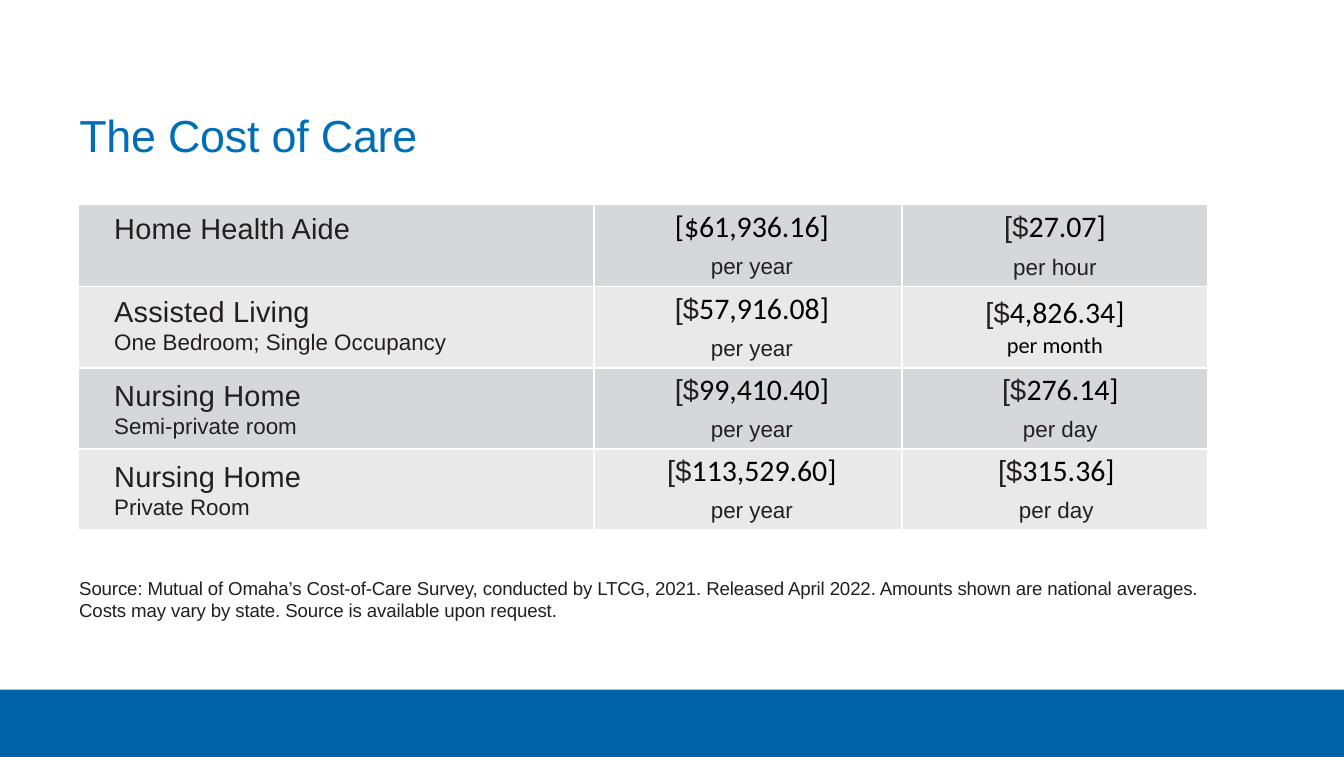
from copy import deepcopy
from lxml.etree import SubElement
from pptx import Presentation
from pptx.dml.color import RGBColor
from pptx.enum.shapes import MSO_SHAPE
from pptx.enum.text import MSO_ANCHOR, MSO_AUTO_SIZE, PP_ALIGN
from pptx.oxml.ns import qn
from pptx.util import Inches, Pt

BAR_BLUE = RGBColor(0x00, 0x62, 0xA7)
TITLE_BLUE = RGBColor(0x00, 0x6E, 0xB6)
INK = RGBColor(0x23, 0x1F, 0x20)
BLACK = RGBColor(0x00, 0x00, 0x00)
BANDS = [RGBColor(0xD5, 0xD7, 0xD8), RGBColor(0xE9, 0xE9, 0xEA)]

TITLE_STYLE = {"size": Pt(24), "name": "Arial", "color": TITLE_BLUE}
HEAD = {"size": Pt(15.5), "name": "Arial", "color": INK}
DETAIL = {"size": Pt(12), "name": "Arial", "color": INK}
AMOUNT = {"size": Pt(16), "name": "Calibri", "color": BLACK}
MONTH = {"size": Pt(12), "name": "Calibri", "color": BLACK}
NOTE = {"size": Pt(10), "name": "Arial", "color": INK}
SPACER = {"size": Pt(8), "name": "Arial", "color": INK}

TITLE = "The Cost of Care"
SOURCE = (
    "Source: Mutual of Omaha’s Cost-of-Care Survey, conducted by LTCG, 2021. "
    "Released April 2022. Amounts shown are national averages. Costs may vary "
    "by state. Source is available upon request."
)
CARE = [
    {"name": "Home Health Aide", "detail": "", "top": 0.07,
     "costs": [("[$61,936.16]", "per year", DETAIL, 0.06, 18.1),
               ("[$27.07]", "per hour", DETAIL, 0, 18.4)]},
    {"name": "Assisted Living", "detail": "One Bedroom; Single Occupancy", "top": 0.06,
     "costs": [("[$57,916.08]", "per year", DETAIL, 0.06, 18.1),
               ("[$4,826.34]", "per month", MONTH, 0, None)]},
    {"name": "Nursing Home", "detail": "Semi-private room", "top": 0.08,
     "costs": [("[$99,410.40]", "per year", DETAIL, 0.06, 18.1),
               ("[$276.14]", "per day", DETAIL, 0.08, 18.1)]},
    {"name": "Nursing Home", "detail": "Private Room", "top": 0.08,
     "costs": [("[$113,529.60]", "per year", DETAIL, 0.06, 18.1),
               ("[$315.36]", "per day", DETAIL, 0.02, 18.1)]},
]
COLUMN_WIDTHS = [3.84, 2.29, 2.28]
ROW_HEIGHT, SPACER_HEIGHT = 0.6, 0.2
LEFT = 0.58


def style_font(font, style):
    for key, value in style.items():
        if key == "color":
            font.color.rgb = value
        else:
            setattr(font, key, value)


def add_span(para, text, style, spacing=0):
    span = para.add_run()
    span.text = text
    style_font(span.font, style)
    if spacing:
        span._r.get_or_add_rPr().set("spc", str(spacing))
    return span


def format_para(para, indent, line=None, align=PP_ALIGN.LEFT):
    para._p.get_or_add_pPr().set("marL", str(Inches(indent)))
    for key, value in {"alignment": align, "space_before": Pt(0),
                       "line_spacing": Pt(line) if line else None}.items():
        setattr(para, key, value)


def set_margins(target, top):
    for side, value in {"left": 0, "top": top, "right": 0, "bottom": 0}.items():
        setattr(target, "margin_" + side, Inches(value))


def fill_text_box(box, place, text, style, spacing):
    box.left, box.top, box.width, box.height = map(Inches, place)
    frame = box.text_frame
    set_margins(frame, 0.02)
    for key, value in {"word_wrap": True, "auto_size": MSO_AUTO_SIZE.NONE,
                       "vertical_anchor": MSO_ANCHOR.TOP}.items():
        setattr(frame, key, value)
    para = frame.paragraphs[0]
    format_para(para, 0.01)
    add_span(para, text, style, spacing)


def add_borders(cell, column):
    properties = cell._tc.get_or_add_tcPr()
    sides = (["a:lnL"] if column > 0 else []) + (["a:lnR"] if column < 2 else [])
    for position, side in enumerate(sides):
        line = SubElement(properties, qn(side), w=str(Pt(1)))
        SubElement(SubElement(line, qn("a:solidFill")), qn("a:srgbClr"), val="FFFFFF")
        properties.insert(position, line)


def fill_care_cell(cell, care):
    set_margins(cell, care["top"])
    frame = cell.text_frame
    para = frame.paragraphs[0]
    format_para(para, 0.27, 18.2 if care["detail"] else None)
    add_span(para, care["name"], HEAD, 10)
    if care["detail"]:
        para = frame.add_paragraph()
        format_para(para, 0.27, 14.1)
        add_span(para, care["detail"], DETAIL)


def fill_cost_cell(cell, amount, period, period_style, indent, line):
    cell.vertical_anchor = MSO_ANCHOR.MIDDLE
    para = cell.text_frame.paragraphs[0]
    format_para(para, indent, line, PP_ALIGN.CENTER)
    if amount == CARE[0]["costs"][0][0]:
        span = add_span(para, amount, AMOUNT)
    else:
        add_span(para, amount[:2], HEAD, 10)
        span = add_span(para, amount[2:], AMOUNT)
    para.add_line_break()
    para._p[-1].append(deepcopy(span._r.rPr))
    add_span(para, period, period_style)


def add_cost_table(page):
    heights = [ROW_HEIGHT] * len(CARE) + [SPACER_HEIGHT]
    table = page.shapes.add_table(
        len(heights), len(COLUMN_WIDTHS), Inches(LEFT), Inches(1.52),
        Inches(sum(COLUMN_WIDTHS)), Inches(sum(heights))).table
    table.first_row = table.horz_banding = False
    for column, width in zip(table.columns, COLUMN_WIDTHS):
        column.width = Inches(width)
    for row, height in zip(table.rows, heights):
        row.height = Inches(height)

    for index, care in enumerate(CARE):
        cells = table.rows[index].cells
        fill_care_cell(cells[0], care)
        for column, cost in enumerate(care["costs"], 1):
            fill_cost_cell(table.cell(index, column), *cost)
        for cell in cells:
            cell.fill.solid()
            cell.fill.fore_color.rgb = BANDS[index % 2]
    for cell in table.rows[len(CARE)].cells:
        set_margins(cell, 0)
        style_font(cell.text_frame.paragraphs[0].font, SPACER)
        cell.fill.background()
    for row in table.rows:
        for column, cell in enumerate(row.cells):
            add_borders(cell, column)


def main():
    deck = Presentation()
    deck.slide_width, deck.slide_height = Inches(10), Inches(5.63)
    page = deck.slides.add_slide(deck.slide_layouts[5])

    bar = page.shapes.add_shape(
        MSO_SHAPE.RECTANGLE, 0, Inches(5.13), deck.slide_width, Inches(0.5))
    bar.shadow.inherit = False
    bar.fill.solid()
    bar.fill.fore_color.rgb = BAR_BLUE
    bar.line.fill.background()

    fill_text_box(page.shapes.title, (LEFT, 0.78, 2.57, 0.43), TITLE, TITLE_STYLE, -10)
    add_cost_table(page)
    note = page.shapes.add_textbox(0, 0, 0, 0)
    fill_text_box(note, (LEFT, 4.27, 8.67, 0.36), SOURCE, NOTE, -5)
    deck.save("out.pptx")


if __name__ == "__main__":
    main()
